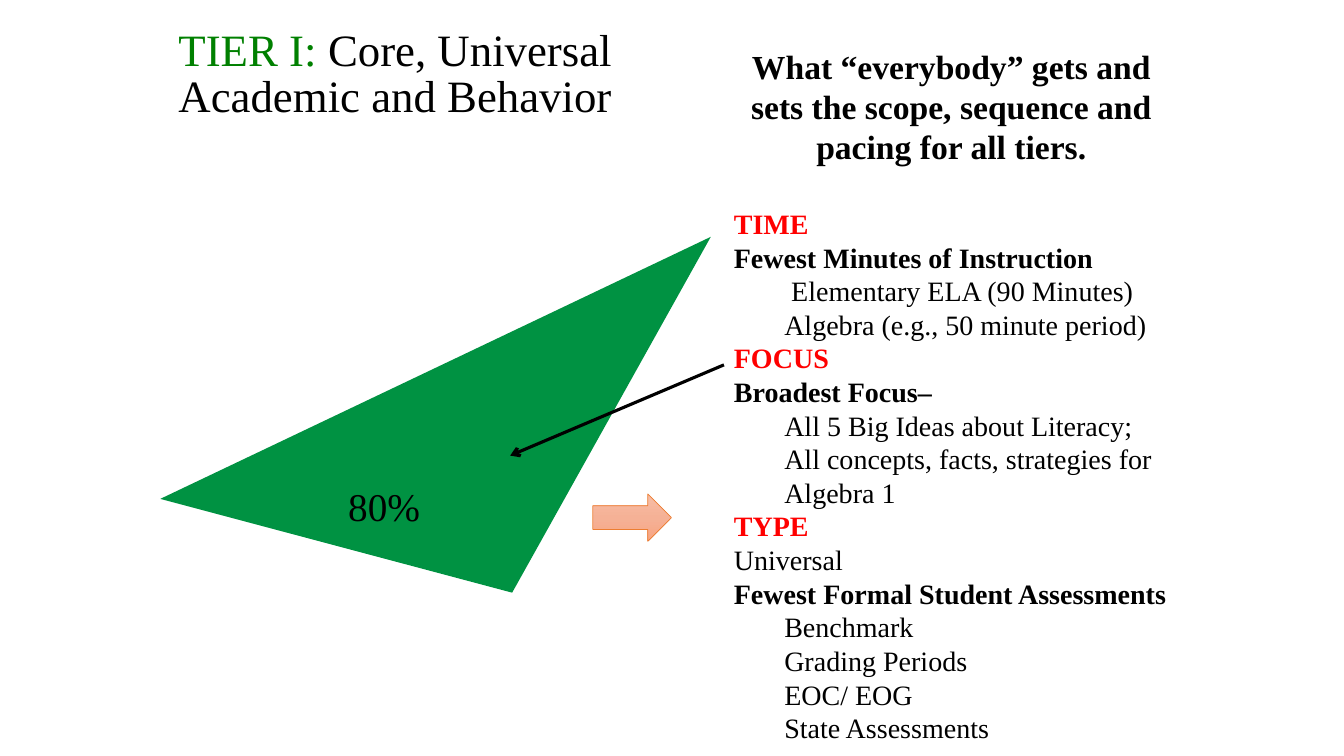
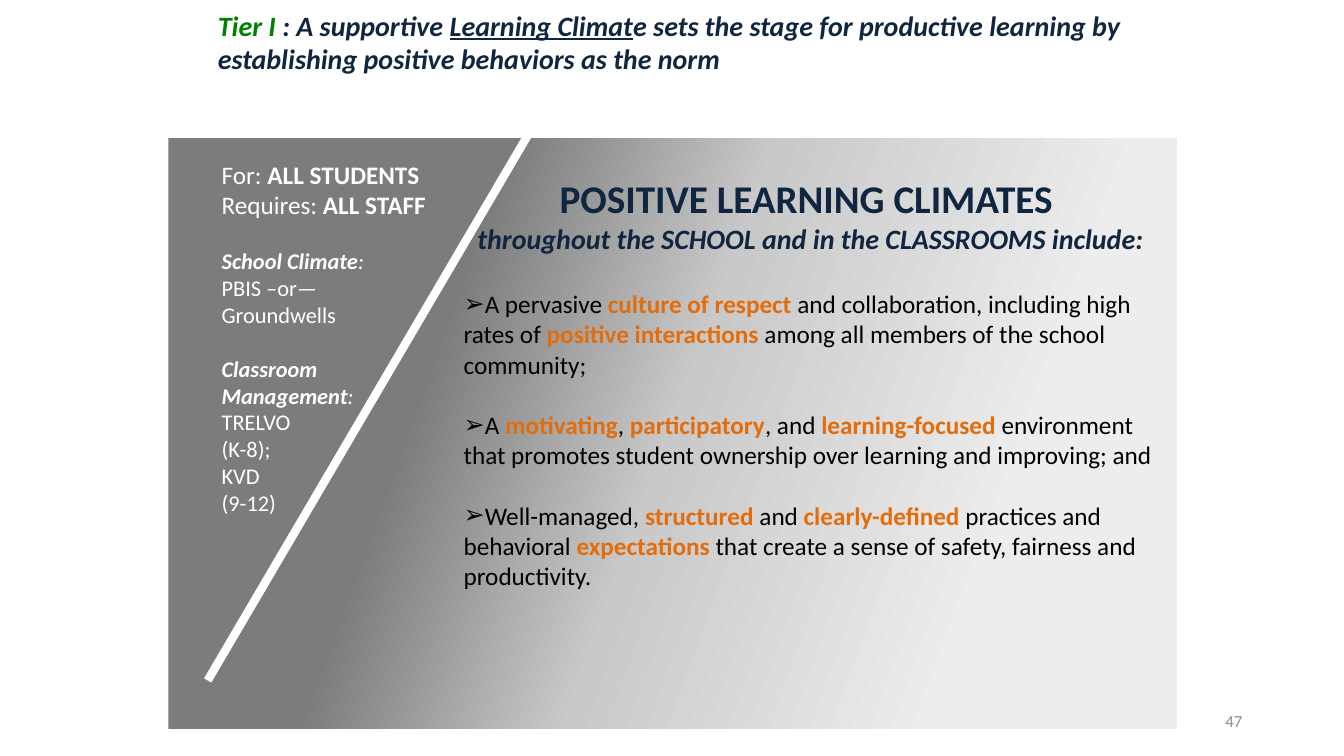
from lxml import etree
from pptx import Presentation
from pptx.dml.color import RGBColor
from pptx.enum.shapes import MSO_CONNECTOR, MSO_SHAPE
from pptx.enum.text import MSO_ANCHOR, MSO_AUTO_SIZE, PP_ALIGN
from pptx.oxml.ns import qn
from pptx.util import Inches, Pt

LEFT, MID, RIGHT = PP_ALIGN.LEFT, PP_ALIGN.CENTER, PP_ALIGN.RIGHT
TOP, CENTER = MSO_ANCHOR.TOP, MSO_ANCHOR.MIDDLE
BLACK, WHITE, NAVY = "000000", "FFFFFF", "10253F"
GREEN, RED, ORANGE = "008000", "FF0000", "E46C0A"
SERIF, SANS = "Times New Roman", "Calibri"

# Run styles: only what differs from the base of the box
BOLD, PLAIN = {"bold": True}, {}
SLANT = {"italic": True}
STRONG = {"bold": True, "italic": True}
HEAD = {"bold": True, "color": RED}
KEY = {"bold": True, "color": ORANGE}
TIER = {"color": GREEN}

# Slide 1: each paragraph is (runs, paragraph format)
TITLE_1 = [
    ([("TIER I: ", TIER), ("Core, Universal", PLAIN)], {"line_spacing": 0.85}),
    ([("Academic and Behavior", PLAIN)], {"line_spacing": 0.85}),
]
INTRO = ("What “everybody” gets and sets the scope, sequence and "
         "pacing for all tiers.")
FACTS = [
    ("TIME", HEAD, 0),
    ("Fewest Minutes of Instruction", BOLD, 0),
    (" Elementary ELA (90 Minutes)", PLAIN, 1),
    ("Algebra (e.g., 50 minute period)", PLAIN, 1),
    ("FOCUS", HEAD, 0),
    ("Broadest Focus–", BOLD, 0),
    ("All 5 Big Ideas about Literacy;", PLAIN, 1),
    ("All concepts, facts, strategies for Algebra 1", PLAIN, 1),
    ("TYPE", HEAD, 0),
    ("Universal", PLAIN, 0),
    ("Fewest Formal Student Assessments", BOLD, 0),
    ("Benchmark", PLAIN, 1),
    ("Grading Periods", PLAIN, 1),
    ("EOC/ EOG", PLAIN, 1),
    ("State Assessments", PLAIN, 1),
]
WEDGE = [(1.59, 4.95), (7.05, 2.35), (5.08, 5.88)]
PEACH = [(0, "F7BDA5"), (50, "F5B196"), (100, "F8A582")]

# Slide 2
TITLE_2 = [([
    ("Tier I ", TIER),
    (": A supportive ", PLAIN),
    ("Learning Climat", {"underline": True}),
    ("e sets the stage for productive learning by establishing "
     "positive behaviors as the norm", PLAIN),
], {})]
BIG = {"size": 18}
SIDE = [
    ([("For: ", BIG), ("ALL STUDENTS", BIG | BOLD)], {}),
    ([("Requires: ", BIG), ("ALL STAFF", BIG | BOLD)],
     {"space_after": Pt(19.5)}),
    ([("School Climate", STRONG), (":", SLANT)], {}),
    ([("PBIS –or—", PLAIN)], {}),
    ([("Groundwells", PLAIN)], {"space_after": Pt(19.5)}),
    ([("Classroom", STRONG)], {}),
    ([("Management", STRONG), (":", SLANT)], {}),
    ([("TRELVO", PLAIN)], {}),
    ([("(K-8);", PLAIN)], {}),
    ([("KVD", PLAIN)], {}),
    ([("(9-12)", PLAIN)], {}),
]
LEAD = [
    ([("POSITIVE LEARNING CLIMATES ",
       {"size": 28, "bold": True, "color": NAVY})], {"alignment": MID}),
    ([("throughout the SCHOOL and in the CLASSROOMS include:",
       STRONG | {"size": 20, "color": NAVY})],
     {"alignment": MID, "space_after": Pt(24)}),
]
POINTS = [
    [("A pervasive ", PLAIN), ("culture of respect ", KEY),
     ("and collaboration, including high rates of ", PLAIN),
     ("positive interactions ", KEY),
     ("among all members of the school community;", PLAIN)],
    [("A ", PLAIN), ("motivating", KEY), (", ", PLAIN),
     ("participatory", KEY), (", and ", PLAIN), ("learning-focused ", KEY),
     ("environment that promotes student ownership over learning and "
      "improving; and", PLAIN)],
    [("Well-managed, ", PLAIN), ("structured ", KEY), ("and ", PLAIN),
     ("clearly-defined ", KEY), ("practices and behavioral ", PLAIN),
     ("expectations ", KEY),
     ("that create a sense of safety, fairness and productivity.", PLAIN)],
]
GRAYS = [(0, "7C7C7C"), (28, "7C7C7C"), (50, "C9C9C9"), (80, "EDEDED")]


def rgb(code):
    return RGBColor.from_string(code)


def place(shape, box):
    names = ("left", "top", "width", "height")
    for name, size in zip(names, box):
        setattr(shape, name, Inches(size))


def write(shape, paras, base, anchor=TOP):
    """Fill a shape with paragraphs of styled runs."""
    frame = shape.text_frame
    form = {"word_wrap": True, "auto_size": MSO_AUTO_SIZE.NONE,
            "vertical_anchor": anchor}
    for name, value in form.items():
        setattr(frame, name, value)
    for i, (runs, look) in enumerate(paras):
        para = frame.add_paragraph() if i else frame.paragraphs[0]
        marks = para._p.get_or_add_pPr()
        for name, value in ({"alignment": LEFT} | look).items():
            if name == "indent":
                marks.set("marL", str(Inches(value)))
                marks.set("indent", "0")
            elif name != "bullet":
                setattr(para, name, value)
        if "bullet" in look:
            etree.SubElement(marks, qn("a:buFont"), typeface=SANS)
            etree.SubElement(marks, qn("a:buChar"), char=look["bullet"])
        for text, style in runs:
            run = para.add_run()
            run.text = text
            for name, value in (base | style).items():
                if name == "color":
                    run.font.color.rgb = rgb(value)
                else:
                    setattr(run.font, name,
                            Pt(value) if name == "size" else value)


def label(slide, box, paras, base, anchor=TOP):
    shape = slide.shapes.add_textbox(*map(Inches, box))
    write(shape, paras, base, anchor)


def start(deck, box, paras, base, anchor):
    """Add a slide with its title set."""
    slide = deck.slides.add_slide(deck.slide_layouts[5])
    place(slide.shapes.title, box)
    write(slide.shapes.title, paras, base, anchor)
    return slide


def blend(slide, kind, box, stops, angle, edge=None):
    """Add a shape with a gradient fill; the angle runs clockwise."""
    shape = slide.shapes.add_shape(kind, *map(Inches, box))
    shape.shadow.inherit = False
    shape.fill.gradient()
    grad = shape._element.spPr.find(qn("a:gradFill"))
    steps = grad.find(qn("a:gsLst"))
    for step in list(steps):
        steps.remove(step)
    for pos, code in stops:
        step = etree.SubElement(steps, qn("a:gs"), pos=str(pos * 1000))
        etree.SubElement(step, qn("a:srgbClr"), val=code)
    shape.fill.gradient_angle = (360 - angle) % 360
    if edge:
        shape.line.color.rgb = rgb(edge)
        shape.line.width = Pt(0.5)
    else:
        shape.line.fill.background()


def rule(slide, ends, code, width, head=False):
    line = slide.shapes.add_connector(MSO_CONNECTOR.STRAIGHT,
                                      *map(Inches, ends))
    line.line.color.rgb = rgb(code)
    line.line.width = Pt(width)
    if head:
        etree.SubElement(line.line._get_or_add_ln(), qn("a:tailEnd"),
                         type="arrow")
    etree.SubElement(line._element.spPr, qn("a:effectLst"))


def core(deck):
    base = {"name": SERIF, "size": 20, "color": BLACK}
    slide = start(deck, (1.67, 0.09, 10, 1.32), TITLE_1,
                  base | {"size": 32}, CENTER)

    # Green wedge
    spots = [(Inches(x), Inches(y)) for x, y in WEDGE]
    pen = slide.shapes.build_freeform(*spots[0])
    pen.add_line_segments(spots[1:], close=True)
    wedge = pen.convert_to_shape()
    wedge.shadow.inherit = False
    wedge.fill.solid()
    wedge.fill.fore_color.rgb = rgb("009242")
    wedge.line.fill.background()

    # Facts with their lead sentence
    paras = [([(INTRO, {"size": 24, "bold": True})],
              {"alignment": MID, "line_spacing": Pt(28.6),
               "space_after": Pt(28.6)})]
    for text, style, level in FACTS:
        paras.append(([(text, style)],
                      {"line_spacing": Pt(24), "indent": level / 2}))
    label(slide, (7.18, 0.41, 4.51, 7.09), paras, base)

    # Arrows and share
    rule(slide, (7.18, 3.62, 5.06, 4.52), BLACK, 2.25, head=True)
    blend(slide, MSO_SHAPE.RIGHT_ARROW, (5.88, 4.9, 0.78, 0.47), PEACH, 90,
          "ED7D31")
    label(slide, (3.16, 4.74, 1.3, 0.57),
          [([("80%", PLAIN)], {"alignment": MID})], base | {"size": 28})


def climate(deck):
    base = {"name": SANS, "size": 18, "color": BLACK}
    slide = start(deck, (2.06, 0.03, 9.44, 0.77), TITLE_2,
                  base | STRONG | {"size": 20, "color": NAVY}, TOP)

    # Gray panel with its slanted divider
    blend(slide, MSO_SHAPE.RECTANGLE, (1.67, 1.37, 10, 5.86), GRAYS, 20)
    label(slide, (2.1, 1.53, 2.81, 3.67), SIDE,
          base | {"size": 16, "color": WHITE})
    points = [(runs, {"bullet": "➢", "indent": 0, "space_after": Pt(21.5)})
              for runs in POINTS]
    label(slide, (4.5, 1.68, 7.08, 4.27), LEAD + points, base)
    rule(slide, (5.33, 1.18, 2.06, 6.75), WHITE, 6)

    # Page number
    label(slide, (9.42, 6.95, 3, 0.4),
          [([("47", PLAIN)], {"alignment": RIGHT})],
          base | {"size": 12, "color": "8C8C8C"}, CENTER)


def main():
    deck = Presentation()
    deck.slide_width, deck.slide_height = Inches(13.33), Inches(7.5)
    core(deck)
    climate(deck)
    deck.save("out.pptx")


if __name__ == "__main__":
    main()
